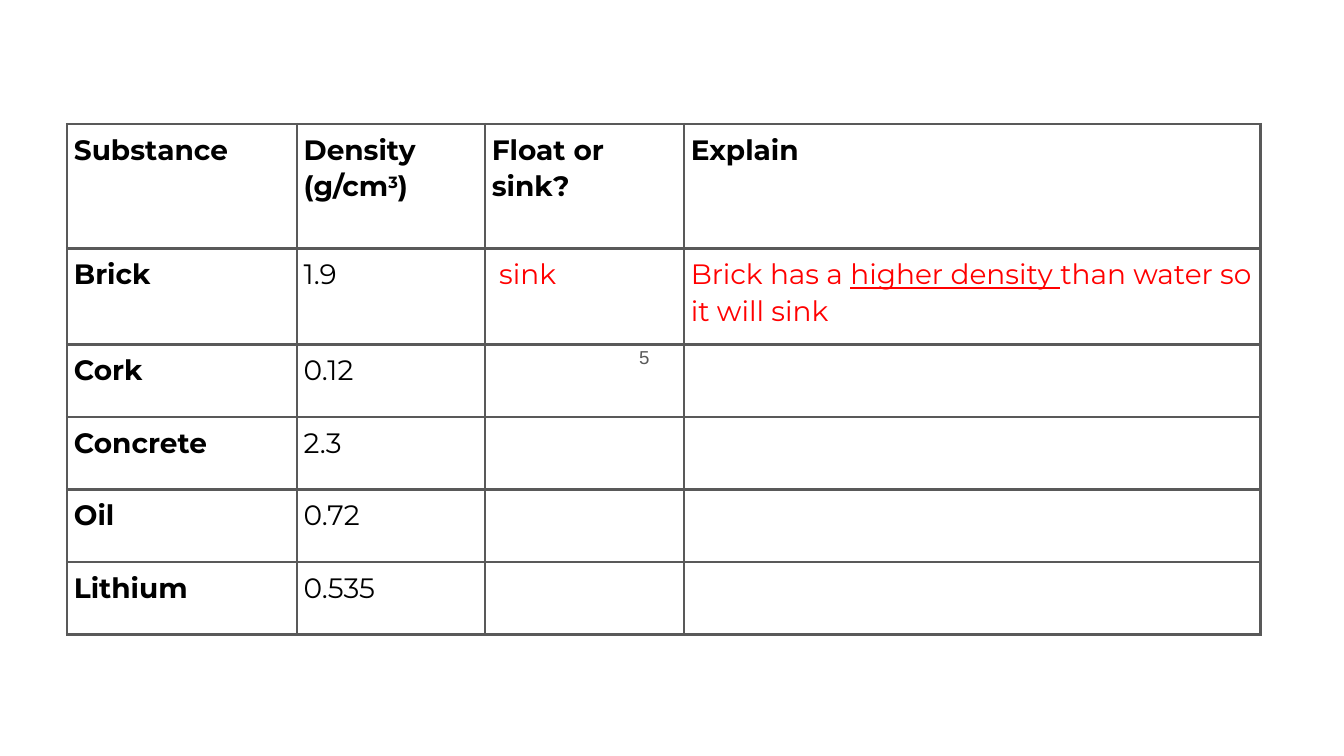
from pptx import Presentation
from pptx.dml.color import RGBColor
from pptx.enum.text import MSO_ANCHOR, PP_ALIGN
from pptx.oxml.ns import qn
from pptx.util import Pt
from lxml.etree import SubElement

BLACK, RED, GRAY = "000000", "FF0000", "595959"
COLUMN_WIDTHS = [123.1, 100.8, 106.6, 308.9]
ROW_HEIGHTS = [66.7, 51.4] + [38.85] * 4
SIDES = ["left", "right", "top", "bottom"]

BOLD = {"bold": True}
ANSWER = {"color": RED}

HEADER = [
    [("Substance", BOLD)],
    [("Density (g/cm", BOLD), ("3", {"bold": True, "superscript": True}), (")", BOLD)],
    [("Float or sink?", BOLD)],
    [("Explain", BOLD)],
]
DENSITIES = [
    ("Brick", "1.9"),
    ("Cork", "0.12"),
    ("Concrete", "2.3"),
    ("Oil", "0.72"),
    ("Lithium", "0.535"),
]
BRICK_ANSWERS = [
    [(" sink", ANSWER)],
    [
        ("Brick has a ", ANSWER),
        ("higher density ", {"color": RED, "underline": True}),
        ("than water so it will sink", ANSWER),
    ],
]


def rgb(value):
    return RGBColor.from_string(value)


def add_run(paragraph, text, size=15, name="Montserrat", color=BLACK,
            bold=False, underline=False, superscript=False):
    run = paragraph.add_run()
    run.text = text
    formats = {"size": Pt(size), "name": name, "bold": bold, "underline": underline}
    for attribute, value in formats.items():
        setattr(run.font, attribute, value)
    run.font.color.rgb = rgb(color)
    if superscript:
        run._r.get_or_add_rPr().set("baseline", "30000")


def set_margins(text_holder, margin):
    for side in SIDES:
        setattr(text_holder, f"margin_{side}", Pt(margin))


def add_borders(cell, color, width):
    properties = cell._tc.get_or_add_tcPr()
    for side in SIDES:
        line = SubElement(properties, qn(f"a:ln{side[0].upper()}"), w=str(Pt(width)))
        fill = SubElement(line, qn("a:solidFill"))
        SubElement(fill, qn("a:srgbClr"), val=color)


def fill_cell(cell, runs):
    set_margins(cell, 3.6)
    add_borders(cell, GRAY, 1.5)
    cell.fill.background()
    paragraph = cell.text_frame.paragraphs[0]
    paragraph.line_spacing = 1.07
    for text, formats in runs:
        add_run(paragraph, text, **formats)


def add_density_table(slide):
    rows = [HEADER]
    for substance, density in DENSITIES:
        answers = BRICK_ANSWERS if substance == "Brick" else [[], []]
        rows.append([[(substance, BOLD)], [(density, {})], *answers])

    table = slide.shapes.add_table(
        len(rows), len(COLUMN_WIDTHS), Pt(36), Pt(66.5),
        Pt(sum(COLUMN_WIDTHS)), Pt(sum(ROW_HEIGHTS))).table
    table.first_row = table.horz_banding = False
    for column, width in zip(table.columns, COLUMN_WIDTHS):
        column.width = Pt(width)
    for row, height, contents in zip(table.rows, ROW_HEIGHTS, rows):
        row.height = Pt(height)
        for cell, runs in zip(row.cells, contents):
            fill_cell(cell, runs)


def add_page_number(slide, number):
    shape = slide.shapes.add_textbox(Pt(333.4), Pt(183.6), Pt(21.6), Pt(15.8))
    frame = shape.text_frame
    frame.word_wrap = True
    frame.vertical_anchor = MSO_ANCHOR.MIDDLE
    set_margins(frame, 7.2)
    paragraph = frame.paragraphs[0]
    paragraph.alignment = PP_ALIGN.RIGHT
    add_run(paragraph, number, size=10, name="Arial", color=GRAY)


def main():
    presentation = Presentation()
    presentation.slide_width = Pt(720)
    presentation.slide_height = Pt(405)
    slide = presentation.slides.add_slide(presentation.slide_layouts[6])
    add_page_number(slide, "5")
    add_density_table(slide)
    presentation.save("out.pptx")


if __name__ == "__main__":
    main()
